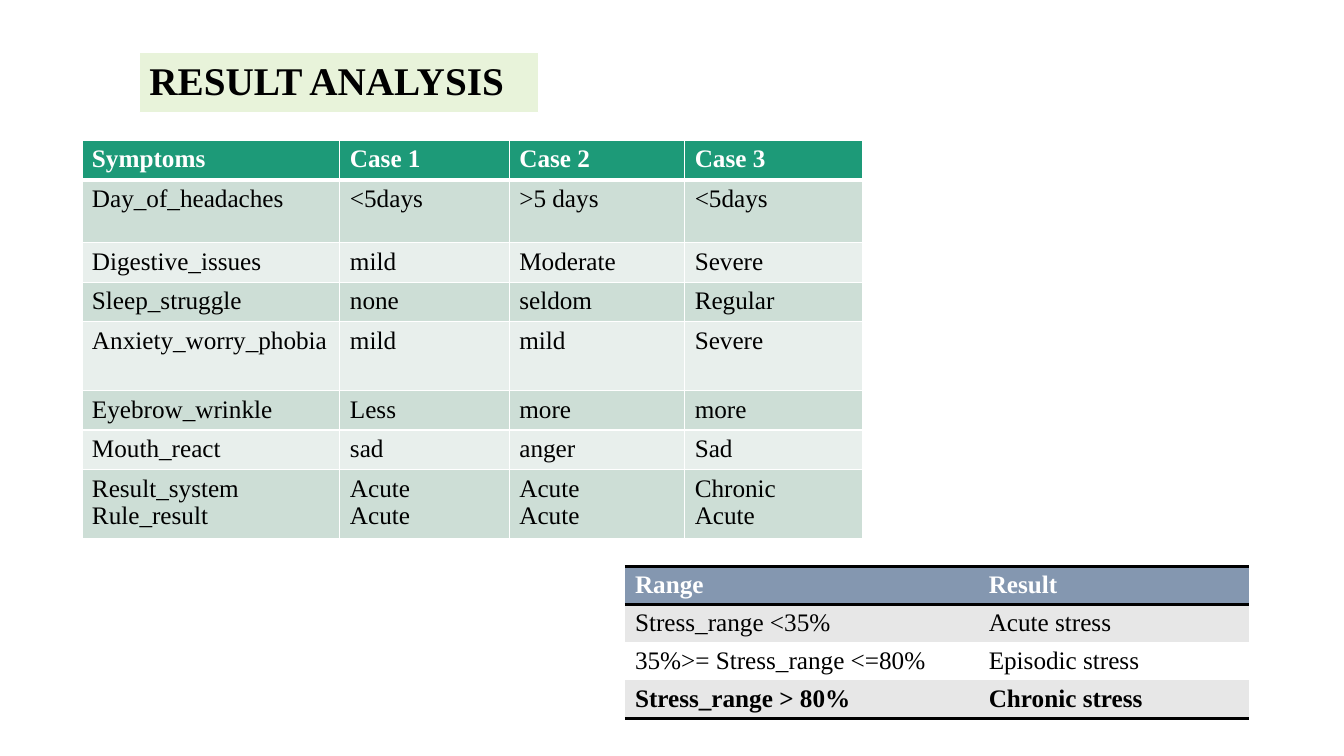
import pptx
import pptx.util
import pptx.dml.color
import pptx.enum.shapes
import pptx.enum.text
import pptx.oxml
import pptx.oxml.ns

Pt = pptx.util.Pt
FONT = "Times New Roman"
COLORS = {
    "black": "000000", "white": "FFFFFF", "title": "E8F3DA",
    "green": "1D9A78", "sage": "CDDED6", "mist": "E8EFEC",
    "slate": "8497B0", "grey": "E7E7E7",
}

SYMPTOMS = [
    ["Symptoms", "Case 1", "Case 2", "Case 3"],
    ["Day_of_headaches", "<5days", ">5 days", "<5days"],
    ["Digestive_issues", "mild", "Moderate", "Severe"],
    ["Sleep_struggle", "none", "seldom", "Regular"],
    ["Anxiety_worry_phobia", "mild", "mild", "Severe"],
    ["Eyebrow_wrinkle", "Less", "more", "more"],
    ["Mouth_react", "sad", "anger", "Sad"],
    ["Result_system\nRule_result", "Acute\nAcute", "Acute\nAcute", "Chronic\nAcute"],
]
RANGES = [
    ["Range", "Result"],
    ["Stress_range <35%", "Acute stress"],
    ["35%>= Stress_range <=80%", "Episodic stress"],
    ["Stress_range > 80%", "Chronic stress"],
]


def rgb(name):
    return pptx.dml.color.RGBColor.from_string(COLORS[name])


def add_run(p, text, size, color, bold):
    r = p.add_run()
    r.text = text
    r.font.name, r.font.size, r.font.bold = FONT, Pt(size), bold
    r.font.color.rgb = rgb(color)


def set_border(cell, side, line):
    """Draw one cell side from (colour, width), or hide it when line is None."""
    ns = pptx.oxml.ns.nsdecls("a")
    if line:
        color, width = line
        xml = (f'<a:ln{side} {ns} w="{Pt(width)}"><a:solidFill>'
               f'<a:srgbClr val="{COLORS[color]}"/></a:solidFill></a:ln{side}>')
    else:
        xml = f'<a:ln{side} {ns} w="0"><a:noFill/></a:ln{side}>'
    cell._tc.get_or_add_tcPr().append(pptx.oxml.parse_xml(xml))


def add_title(s, text, left, top, width, height):
    title = s.shapes.title
    title.left, title.top, title.width, title.height = left, top, width, height
    tf = title.text_frame
    tf.auto_size = pptx.enum.text.MSO_AUTO_SIZE.NONE
    tf.vertical_anchor = pptx.enum.text.MSO_ANCHOR.MIDDLE
    p = tf.paragraphs[0]
    p.alignment = pptx.enum.text.PP_ALIGN.LEFT
    p.line_spacing = 0.9
    add_run(p, text, 28, "black", True)


def add_title_band(s, left, top, width, height):
    sp = s.shapes.add_shape(pptx.enum.shapes.MSO_SHAPE.RECTANGLE, left, top, width, height)
    sp.shadow.inherit = False
    sp.fill.solid()
    sp.fill.fore_color.rgb = rgb("title")
    sp.line.color.rgb = rgb("white")
    sp.line.width = Pt(1)
    s.shapes.title.element.addprevious(sp.element)  # behind the title


def add_table(s, rows, left, top, widths, heights, header, bands, rules, sides, bold_rows):
    """rules holds the line over each row and the one below the last."""
    tbl = s.shapes.add_table(len(rows), len(widths), Pt(left), Pt(top),
                             Pt(sum(widths)), Pt(sum(heights))).table
    tbl.first_row = tbl.horz_banding = False
    for col, width in zip(tbl.columns, widths):
        col.width = Pt(width)
    for i, texts in enumerate(rows):
        tbl.rows[i].height = Pt(heights[i])
        for j, text in enumerate(texts):
            cell = tbl.cell(i, j)
            for side, line in zip("LRTB", (sides, sides, rules[i], rules[i + 1])):
                set_border(cell, side, line)
            cell.fill.solid()
            cell.fill.fore_color.rgb = rgb(bands[(i - 1) % 2] if i else header)
            tf = cell.text_frame
            for k, part in enumerate(text.split("\n")):
                p = tf.add_paragraph() if k else tf.paragraphs[0]
                add_run(p, part, 18, "black" if i else "white", i in bold_rows)


def main():
    prs = pptx.Presentation()
    prs.slide_width, prs.slide_height = Pt(960), Pt(540)
    s = prs.slides.add_slide(prs.slide_layouts[5])

    # Title on its pale band
    add_title(s, "RESULT ANALYSIS", Pt(99.5), Pt(37.5), Pt(305), Pt(43))
    add_title_band(s, Pt(99.5), Pt(37.5), Pt(285), Pt(43))

    # Symptoms by case
    thin, thick = ("white", 1), ("white", 3)
    row = 28.2
    add_table(s, SYMPTOMS, 58.5, 100.3, [184.3, 121, 125.3, 127.4],
              [row, 45, row, row, 49.2, row, row, 49.2],
              "green", ("sage", "mist"), [thin, thick] + [thin] * 7, thin, {0})

    # Stress ranges
    rule = ("black", 2)
    add_table(s, RANGES, 446.4, 404.5, [252.7, 193], [27.1] * 4,
              "slate", ("grey", "white"), [rule, rule, None, None, rule], None, {0, 3})

    prs.save("out.pptx")


if __name__ == "__main__":
    main()
